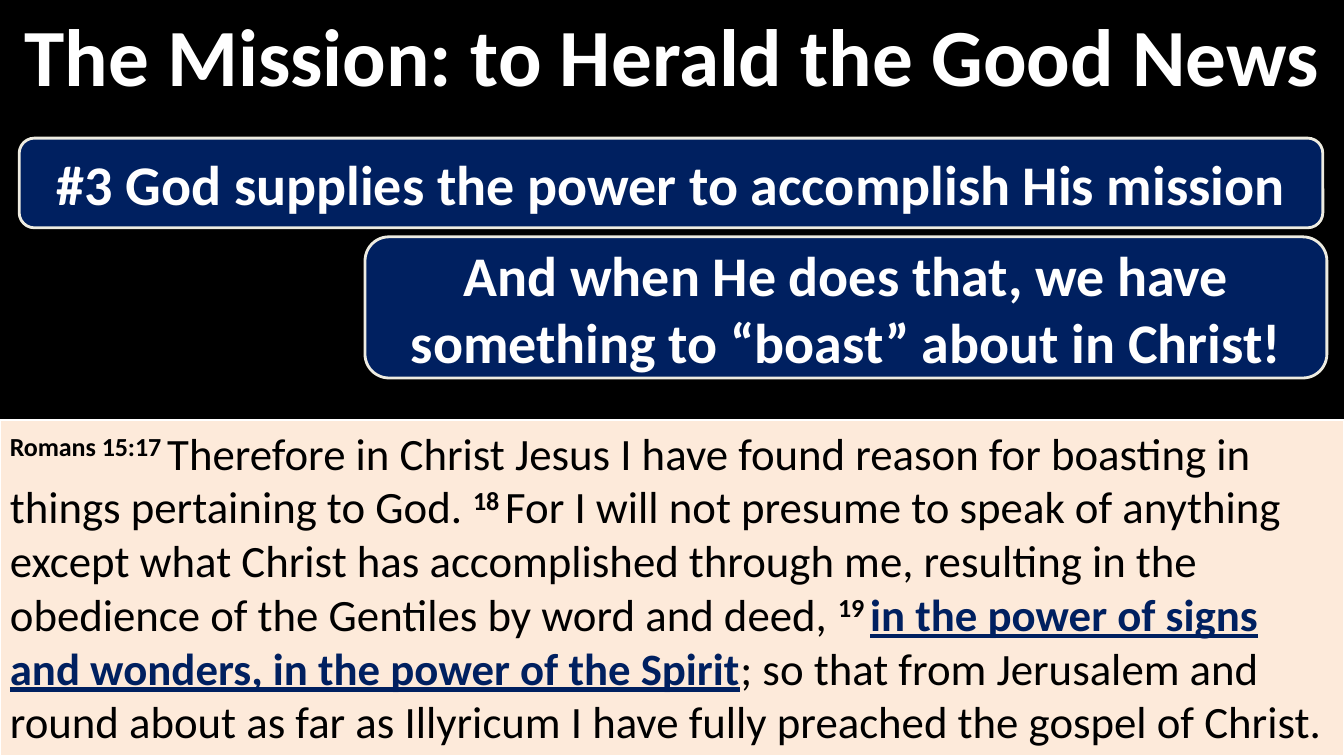
from pptx import Presentation
from pptx.dml.color import RGBColor
from pptx.enum.shapes import MSO_SHAPE
from pptx.enum.text import MSO_ANCHOR, PP_ALIGN
from pptx.util import Inches, Pt

WHITE, BLACK, NAVY = "FFFFFF", "000000", "002060"
CREAM, IVORY = "FDEADA", "EEECE1"


def color(code):
    """Turn a hex string into a colour."""
    return RGBColor.from_string(code)


class Deck:
    """Hold the style and the current slide, placing items by percent of its size."""

    def __init__(self, width, height, back, font):
        """Open a blank slide with a plain background."""
        self.file = Presentation()
        self.file.slide_width = Inches(width)
        self.file.slide_height = Inches(height)
        self.font = font
        self.slide = self.file.slides.add_slide(self.file.slide_layouts[6])
        fill = self.slide.background.fill
        fill.solid()
        fill.fore_color.rgb = color(back)

    def place(self, left, top, width, height):
        """Convert percent shares to slide lengths."""
        across = self.file.slide_width / 100
        down = self.file.slide_height / 100
        return [round(v) for v in (left * across, top * down, width * across, height * down)]

    def letter(self, shape, runs, size, align=PP_ALIGN.CENTER, anchor=MSO_ANCHOR.MIDDLE):
        """Fill one paragraph with (text, colour, bold, raised, underlined) runs."""
        frame = shape.text_frame
        frame.word_wrap = True
        frame.vertical_anchor = anchor
        line = frame.paragraphs[0]
        line.alignment = align
        for text, tint, bold, raised, under in runs:
            run = line.add_run()
            run.text = text
            font = run.font
            font.name, font.size = self.font, Pt(size)
            font.bold, font.underline = bold, under
            font.color.rgb = color(tint)
            if raised:
                run._r.get_or_add_rPr().set("baseline", "30000")

    def title(self, area, text, size):
        """Add a bold white heading."""
        box = self.slide.shapes.add_textbox(*self.place(*area))
        self.letter(box, [(text, WHITE, True, False, False)], size)

    def panel(self, kind, area, fill, edge, weight):
        """Add a filled and outlined shape."""
        shape = self.slide.shapes.add_shape(kind, *self.place(*area))
        shape.shadow.inherit = False
        shape.fill.solid()
        shape.fill.fore_color.rgb = color(fill)
        shape.line.color.rgb = color(edge)
        shape.line.width = Pt(weight)
        return shape

    def callout(self, area, text, size):
        """Add a navy callout with a bold white message."""
        shape = self.panel(MSO_SHAPE.ROUNDED_RECTANGULAR_CALLOUT, area, NAVY, IVORY, 2)
        for spot, value in enumerate((-0.22, 0.5, 0.17)):
            shape.adjustments[spot] = value
        self.letter(shape, [(text, WHITE, True, False, False)], size)

    def passage(self, area, runs, size):
        """Add a cream panel of left-aligned verses."""
        shape = self.panel(MSO_SHAPE.RECTANGLE, area, CREAM, WHITE, 1.5)
        self.letter(shape, runs, size, PP_ALIGN.LEFT, MSO_ANCHOR.TOP)


def verse(mark):
    """Describe a raised verse number."""
    return mark, BLACK, True, True, False


def plain(text):
    """Describe ordinary verse text."""
    return text, BLACK, False, False, False


def stress(text):
    """Describe an emphasised phrase."""
    return text, NAVY, True, False, True


def main():
    """Build and save the slide."""
    deck = Deck(13.33, 7.5, BLACK, "Calibri")
    deck.title((0, 0, 100, 14.4), "The Mission: to Herald the Good News", 58)
    deck.passage((0, 55.6, 100, 44.4), [
        verse("Romans 15:17 "),
        plain("Therefore in Christ Jesus I have found reason for boasting in "
              "things pertaining to God. "),
        verse("18 "),
        plain("For I will not presume to speak of anything except what Christ has "
              "accomplished through me, resulting in the obedience of the Gentiles "
              "by word and deed, "),
        verse("19 "),
        stress("in the power of signs and wonders, in the power of the Spirit"),
        plain("; so that from Jerusalem and round about as far as Illyricum "
              "I have fully preached the gospel of Christ."),
    ], 32)
    deck.callout((1.43, 18.27, 97, 11.87),
                 "#3 God supplies the power to accomplish His mission", 40)
    deck.callout((27.16, 31.33, 71.57, 18.67),
                 "And when He does that, we have something to “boast” about in Christ!", 40)
    deck.file.save("out.pptx")


if __name__ == "__main__":
    main()
